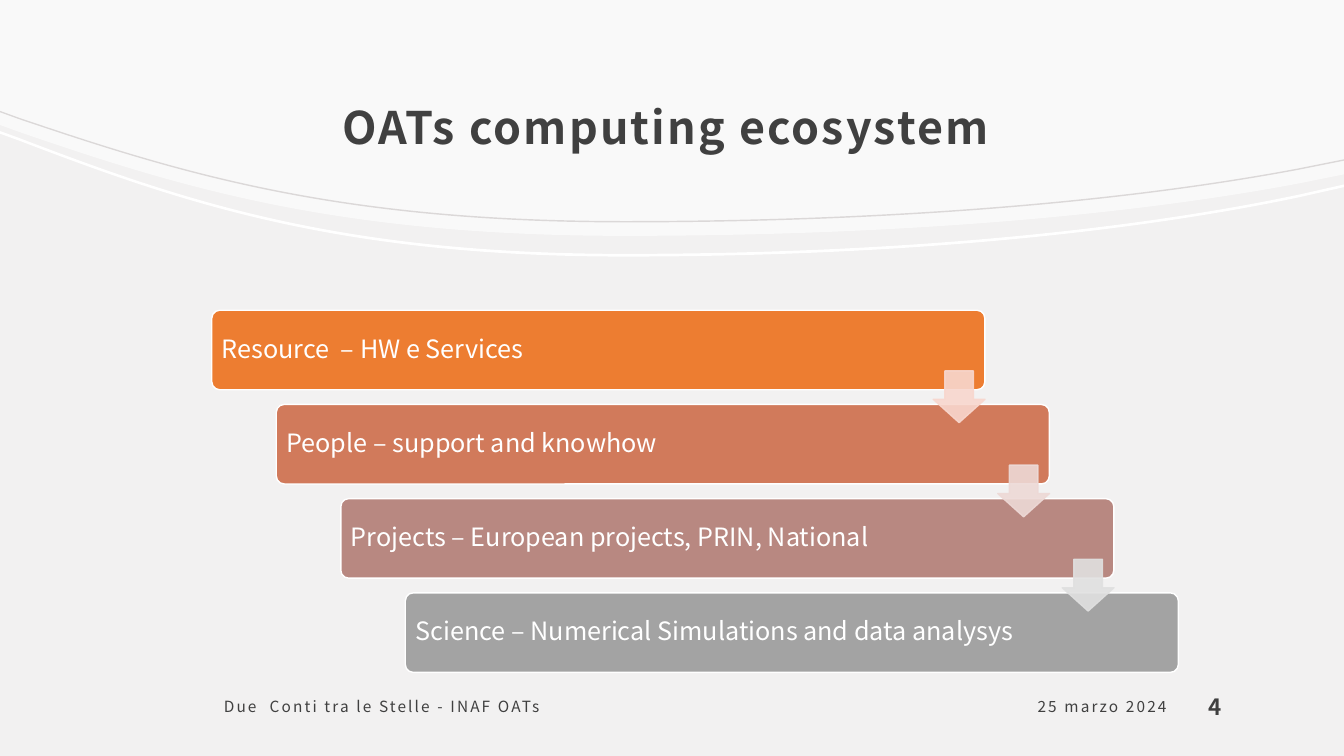
"""Build the OATs computing ecosystem slide: curved header and a descending staircase of steps."""
from lxml import etree
from pptx import Presentation
from pptx.dml.color import RGBColor
from pptx.enum import shapes, text
from pptx.oxml import ns
from pptx.util import Pt

FONT = "Noto Sans CJK JP"
BACKGROUND = RGBColor(0xF2, 0xF1, 0xF1)
WHITE = RGBColor(0xFF, 0xFF, 0xFF)
HAIRLINE = RGBColor(0xDB, 0xD8, 0xD8)
DARK = RGBColor(0x40, 0x40, 0x40)
ORANGE = RGBColor(0xED, 0x7D, 0x31)
TERRACOTTA = RGBColor(0xD1, 0x7A, 0x5B)
ROSE = RGBColor(0xB8, 0x88, 0x81)
GREY = RGBColor(0xA3, 0xA3, 0xA3)
PALE_ORANGE = RGBColor(0xF8, 0xD7, 0xCE)
PALE_ROSE = RGBColor(0xED, 0xD9, 0xD6)
PALE_GREY = RGBColor(0xE0, 0xE0, 0xE0)


def write(shape, content, size, color, bold=False, align=text.PP_ALIGN.LEFT, anchor=text.MSO_ANCHOR.MIDDLE,
          line_spacing=1.0, tracking=0, insets=(8.6, 8.6, 8.6, 7.2)):
    frame = shape.text_frame
    left, top, right, bottom = map(Pt, insets)
    frame_format = {"word_wrap": True, "auto_size": text.MSO_AUTO_SIZE.NONE, "vertical_anchor": anchor,
                    "margin_left": left, "margin_top": top, "margin_right": right, "margin_bottom": bottom}
    for name, value in frame_format.items():
        setattr(frame, name, value)
    paragraph = frame.paragraphs[0]
    paragraph.alignment = align
    paragraph.line_spacing = line_spacing
    run = paragraph.add_run()
    run.text = content
    for name, value in {"name": FONT, "size": Pt(size), "bold": bold}.items():
        setattr(run.font, name, value)
    run.font.color.rgb = color
    if tracking:
        run.font._element.set("spc", str(int(tracking * 100)))


def set_opacity(shape, percent):
    for color in shape._element.spPr.iter(ns.qn("a:srgbClr")):
        etree.SubElement(color, ns.qn("a:alpha")).set("val", str(percent * 1000))


presentation = Presentation()
presentation.slide_width, presentation.slide_height = Pt(960), Pt(540)
slide = presentation.slides.add_slide(presentation.slide_layouts[5])
slide.background.fill.solid()
slide.background.fill.fore_color.rgb = BACKGROUND

# each edge: straight lead-in, two cubic curves meeting at the lowest point, straight lead-out
EDGE_X = [0, 13.7, 128.9, 239.8, 446.4, 630, 798.5, 928.1, 960]
header_curves = [
    ([89.3, 94.3, 133.9, 168.5, 168.5, 168.5, 155.5, 131, 124.6], None, WHITE, 60),
    ([93.6, 98.6, 142.6, 181.4, 181.4, 181.4, 166.3, 139, 131.8], 1.9, WHITE, 100),
    ([79.2, 84.2, 123.1, 157.9, 157.9, 157.9, 144.7, 120.2, 113.8], 1, HAIRLINE, 100),
]
for edge_y, thickness, color, opacity in header_curves:
    edge = list(zip(EDGE_X, edge_y))
    other_side = [(x, y + thickness) for x, y in edge] if thickness else [(0, 0), (960, 0)]
    outline = [(Pt(x), Pt(y)) for x, y in edge + other_side[::-1]]
    builder = slide.shapes.build_freeform(*outline[0])
    builder.add_line_segments(outline[1:], close=True)
    curve = builder.convert_to_shape()

    # merge three neighbouring line targets into one cubic segment
    segments = list(curve._element.spPr.iter(ns.qn("a:lnTo")))
    for first in (1, 4, 10, 13) if thickness else (1, 4):
        cubic = etree.Element(ns.qn("a:cubicBezTo"))
        segments[first].addprevious(cubic)
        for segment in segments[first:first + 3]:
            cubic.append(segment[0])
            segment.getparent().remove(segment)

    curve.shadow.inherit = False
    curve.fill.solid()
    curve.fill.fore_color.rgb = color
    curve.line.fill.background()
    if opacity < 100:
        set_opacity(curve, opacity)

title = slide.shapes.title
title.left, title.top, title.width, title.height = Pt(96), Pt(42.9), Pt(768), Pt(82)
write(title, "OATs computing ecosystem ", 32, DARK, bold=True, align=text.PP_ALIGN.CENTER,
      line_spacing=1.3, tracking=1.5)
curve._element.addprevious(title._element)

STEP_LEFT, STEP_TOP, STEP_RIGHTWARD, STEP_DOWN = 151.3, 221.6, 46.08, 67.3
steps = [
    ("Resource  – HW e Services", ORANGE),
    ("People – support and knowhow", TERRACOTTA),
    ("Projects – European projects, PRIN, National", ROSE),
    ("Science – Numerical Simulations and data analysys", GREY),
]
for index, (label, color) in enumerate(steps):
    bar = slide.shapes.add_shape(shapes.MSO_SHAPE.ROUNDED_RECTANGLE, Pt(STEP_LEFT + index * STEP_RIGHTWARD),
                                 Pt(STEP_TOP + index * STEP_DOWN), Pt(552.2), Pt(56.8))
    bar.adjustments[0] = 0.1
    bar.shadow.inherit = False
    bar.fill.solid()
    bar.fill.fore_color.rgb = color
    bar.line.color.rgb = WHITE
    bar.line.width = Pt(1)
    write(bar, label, 18, WHITE, line_spacing=0.9, insets=(5.6, 5, 5, 5))

for index, color in enumerate([PALE_ORANGE, PALE_ROSE, PALE_GREY]):
    arrow = slide.shapes.add_shape(shapes.MSO_SHAPE.DOWN_ARROW, Pt(STEP_LEFT + 515.3 + index * STEP_RIGHTWARD),
                                   Pt(STEP_TOP + 43.3 + index * STEP_DOWN), Pt(37), Pt(37))
    arrow.adjustments[0], arrow.adjustments[1] = 0.55, 0.45
    arrow.shadow.inherit = False
    arrow.fill.solid()
    arrow.fill.fore_color.rgb = color
    arrow.line.color.rgb = color
    arrow.line.width = Pt(1)
    set_opacity(arrow, 90)

footers = [
    ("25 marzo 2024", 618, 224, {"size": 11, "align": text.PP_ALIGN.RIGHT, "tracking": 1.5}),
    ("Due  Conti tra le Stelle - INAF OATs", 151.3, 446.4, {"size": 11, "tracking": 1.5}),
    ("4", 854.6, 93.6, {"size": 16, "bold": True, "anchor": text.MSO_ANCHOR.BOTTOM}),
]
for content, left, width, text_format in footers:
    footer = slide.shapes.add_textbox(Pt(left), Pt(486), Pt(width), Pt(35.8))
    write(footer, content, color=DARK, **text_format)

presentation.save("out.pptx")
